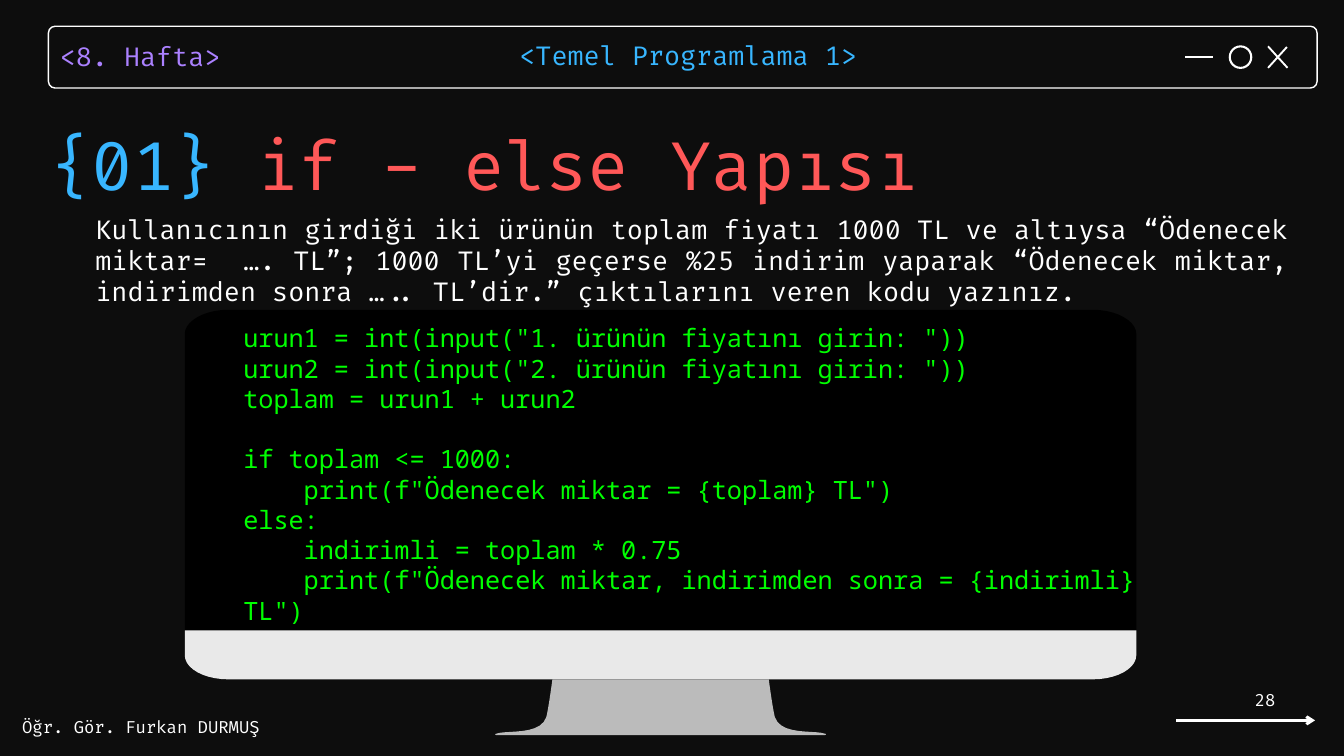
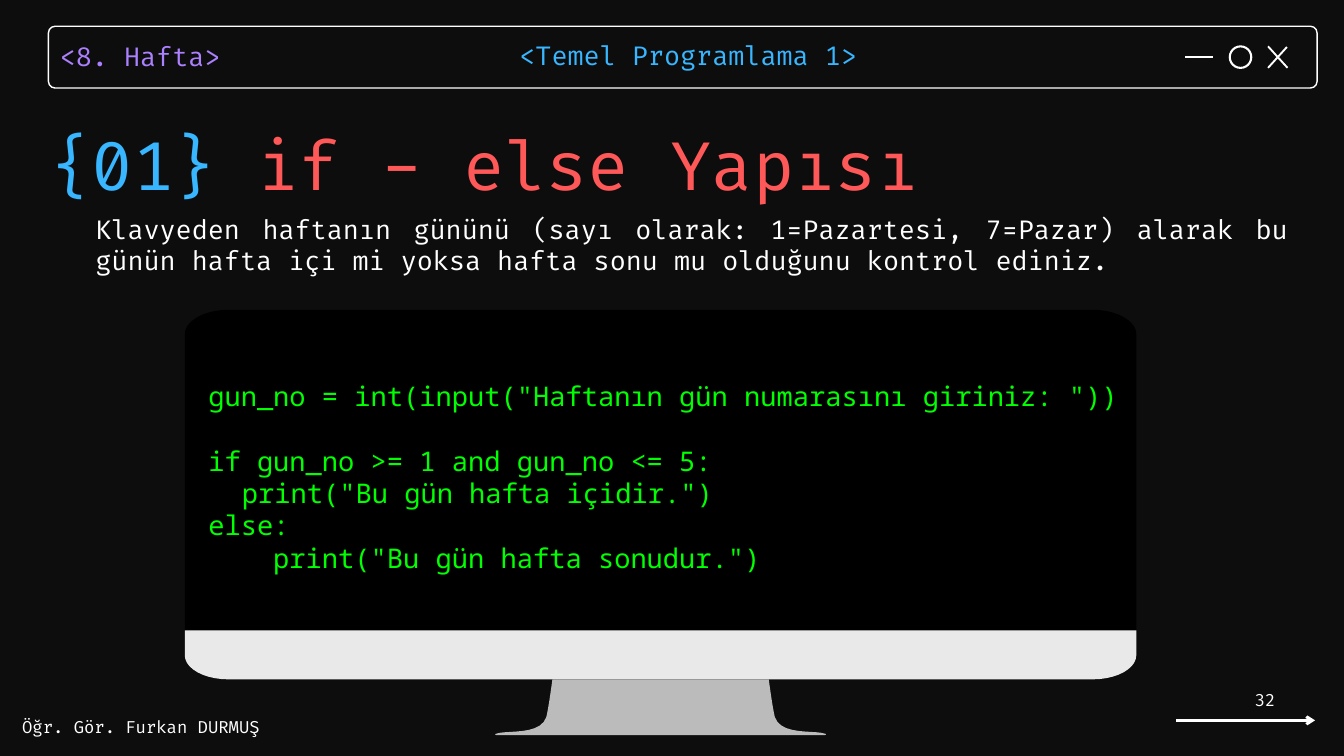
import pptx
import pptx.dml.color
import pptx.enum.shapes
import pptx.enum.text
import pptx.oxml.ns
import pptx.util
from lxml import etree

Inches = pptx.util.Inches
Pt = pptx.util.Pt
Shape = pptx.enum.shapes.MSO_SHAPE
Align = pptx.enum.text.PP_ALIGN

BACKGROUND, SCREEN, WHITE = "0D0D0D", "000000", "FFFFFF"
PURPLE, BLUE, RED, GREEN = "AB81FF", "38B6FF", "FF5858", "00FF00"
BASE, STAND = "E9E9E9", "BBBBBB"
BODY_FONT, CODE_FONT = "Fira Code", "Noto Sans Mono"
MONITOR_CENTER = 9.83

SCREEN_HALF = [[(3.4, 4.61), (3.04, 4.61), (2.75, 4.78), (2.75, 4.97)], [(2.75, 9.38)]]
BASE_HALF = [[(2.75, 9.38)], [(2.75, 9.75), (2.75, 9.95), (3.04, 10.11), (3.4, 10.11)]]
STAND_HALF = [
    [(8.22, 10.11), (8.22, 10.11), (8.17, 10.5), (8.13, 10.67)],
    [(8.13, 10.67), (8.04, 10.95), (7.53, 10.86), (7.38, 10.92)],
    [(7.38, 10.92), (7.36, 10.92), (7.37, 10.94), (7.39, 10.94)],
]


def rgb(value):
    return pptx.dml.color.RGBColor.from_string(value)


def trace(piece, steps=10):
    if len(piece) == 1:
        return piece
    weights = [
        ((1 - t) ** 3, 3 * t * (1 - t) ** 2, 3 * t**2 * (1 - t), t**3)
        for t in (step / steps for step in range(steps + 1))
    ]
    return [
        tuple(sum(w * point[axis] for w, point in zip(weight, piece)) for axis in (0, 1))
        for weight in weights
    ]


class CodeLesson:
    """Draws the elements of a programming lesson on the current page."""

    def __init__(self):
        self.deck = pptx.Presentation()
        self.deck.slide_width = Inches(20)
        self.deck.slide_height = Inches(11.25)
        self.page = None

    def add_page(self):
        self.page = self.deck.slides.add_slide(self.deck.slide_layouts[6])
        fill = self.page.background.fill
        fill.solid()
        fill.fore_color.rgb = rgb(BACKGROUND)

    def add_text(self, place, paragraphs, size, font=BODY_FONT, inset=True, **para_format):
        box = self.page.shapes.add_textbox(*map(Inches, place))
        frame = box.text_frame
        frame_format = {"word_wrap": True}
        if inset:
            frame_format["vertical_anchor"] = pptx.enum.text.MSO_ANCHOR.MIDDLE
        else:
            frame_format["auto_size"] = pptx.enum.text.MSO_AUTO_SIZE.SHAPE_TO_FIT_TEXT
            sides = ("left", "right", "top", "bottom")
            frame_format.update({f"margin_{side}": 0 for side in sides})
        for name, value in frame_format.items():
            setattr(frame, name, value)
        for index, spans in enumerate(paragraphs):
            para = frame.add_paragraph() if index else frame.paragraphs[0]
            for name, value in para_format.items():
                setattr(para, name, value)
            for text, color in spans:
                span = para.add_run()
                span.text = text
                for name, value in {"name": font, "size": Pt(size)}.items():
                    setattr(span.font, name, value)
                span.font.color.rgb = rgb(color)
        return frame

    def paint(self, shape, fill=None, line=None, width=0):
        shape.shadow.inherit = False
        if fill:
            shape.fill.solid()
            shape.fill.fore_color.rgb = rgb(fill)
        else:
            shape.fill.background()
        if line:
            shape.line.color.rgb = rgb(line)
            shape.line.width = Pt(width)
        else:
            shape.line.fill.background()

    def add_shape(self, kind, place, **paint):
        shape = self.page.shapes.add_shape(kind, *map(Inches, place))
        self.paint(shape, **paint)
        return shape

    def add_line(self, start, end, width=2, arrow=False):
        line = self.page.shapes.add_connector(
            pptx.enum.shapes.MSO_CONNECTOR.STRAIGHT, *map(Inches, start + end)
        )
        line.line.color.rgb = rgb(WHITE)
        line.line.width = Pt(width)
        qn = pptx.oxml.ns.qn
        if arrow:
            etree.SubElement(line.line._get_or_add_ln(), qn("a:tailEnd"), type="arrow")
        etree.SubElement(line._element.spPr, qn("a:effectLst"))

    def add_symmetric(self, half, fill):
        left = [point for piece in half for point in trace(piece)]
        right = [(2 * MONITOR_CENTER - x, y) for x, y in reversed(left)]
        points = [(Inches(x), Inches(y)) for x, y in left + right]
        builder = self.page.shapes.build_freeform(*points[0])
        builder.add_line_segments(points[1:], close=True)
        self.paint(builder.convert_to_shape(), fill=fill)

    def add_header(self):
        spacing = Pt(39.2)
        self.add_text((0.89, 0.52, 3.4, 0.53), [[("<8. Hafta>", PURPLE)]], 28,
                      inset=False, line_spacing=spacing)
        bar = self.add_shape(Shape.ROUNDED_RECTANGLE, (0.72, 0.39, 18.88, 0.92),
                             line=WHITE, width=1.5)
        bar.adjustments[0] = 0.11
        self.add_line((18.87, 0.69), (19.16, 1.01))
        self.add_line((19.15, 0.7), (18.87, 1.01))
        self.add_line((17.64, 0.85), (18.05, 0.85))
        self.add_shape(Shape.OVAL, (18.3, 0.69, 0.32, 0.32), line=WHITE, width=2.25)
        self.add_text((7.73, 0.51, 5.29, 0.53), [[("<Temel Programlama 1>", BLUE)]], 28,
                      inset=False, line_spacing=spacing)

    def add_footer(self, number):
        self.add_line((17.5, 10.72), (19.57, 10.72), width=3, arrow=True)
        self.add_text((0.33, 10.67, 3.67, 0.3), [[("Öğr. Gör. Furkan DURMUŞ", WHITE)]], 18,
                      inset=False)
        self.add_text((16.75, 10.21, 2.33, 0.4), [[(str(number), WHITE)]], 18,
                      alignment=Align.RIGHT)

    def add_title(self):
        self.add_text((0.75, 1.61, 19.25, 1.38),
                      [[("{01} ", BLUE), ("if - else Yapısı", RED)]], 72,
                      inset=False, line_spacing=Pt(102.6))

    def add_task(self, task, height):
        self.add_text((1.42, 3.17, 17.73, height), [[(task, WHITE)]], 28,
                      inset=False, alignment=Align.JUSTIFY)

    def add_monitor(self):
        self.add_symmetric(SCREEN_HALF, SCREEN)
        self.add_symmetric(BASE_HALF, BASE)
        self.add_symmetric(STAND_HALF, STAND)
        self.add_shape(Shape.RECTANGLE, (3.36, 4.89, 13.02, 4.24),
                       fill=SCREEN, line=SCREEN, width=2)

    def add_code(self, place, blocks, size):
        lines = [[(line, GREEN)] for block in blocks for line in block]
        frame = self.add_text(place, lines, size, font=CODE_FONT, inset=False)
        start = 0
        for block in blocks[:-1]:
            start += len(block)
            frame.paragraphs[start].space_before = Pt(size * 1.2)


EXERCISES = [
    {
        "number": 28,
        "task": "Kullanıcının girdiği iki ürünün toplam fiyatı 1000 TL ve altıysa "
                "“Ödenecek miktar=  …. TL”; 1000 TL’yi geçerse %25 indirim yaparak "
                "“Ödenecek miktar, indirimden sonra ….. TL’dir.” çıktılarını veren kodu yazınız.",
        "task_height": 1.41,
        "place": (3.62, 4.8, 13.29, 4.09),
        "size": 27,
        "blocks": [
            [
                'urun1 = int(input("1. ürünün fiyatını girin: "))',
                'urun2 = int(input("2. ürünün fiyatını girin: "))',
                "toplam = urun1 + urun2",
            ],
            [
                "if toplam <= 1000:",
                '    print(f"Ödenecek miktar = {toplam} TL")',
                "else:",
                "    indirimli = toplam * 0.75",
                '    print(f"Ödenecek miktar, indirimden sonra = {indirimli} TL")',
            ],
        ],
    },
    {
        "number": 32,
        "task": "Klavyeden haftanın gününü (sayı olarak: 1=Pazartesi, 7=Pazar) alarak bu "
                "günün hafta içi mi yoksa hafta sonu mu olduğunu kontrol ediniz.",
        "task_height": 0.94,
        "place": (3.1, 5.64, 13.86, 2.93),
        "size": 29,
        "blocks": [
            ['gun_no = int(input("Haftanın gün numarasını giriniz: "))'],
            [
                "if gun_no >= 1 and gun_no <= 5:",
                '\tprint("Bu gün hafta içidir.")',
                "else:",
                '    print("Bu gün hafta sonudur.")',
            ],
        ],
    },
]


def main():
    lesson = CodeLesson()
    for exercise in EXERCISES:
        lesson.add_page()
        lesson.add_header()
        lesson.add_footer(exercise["number"])
        lesson.add_task(exercise["task"], exercise["task_height"])
        lesson.add_title()
        lesson.add_monitor()
        lesson.add_code(exercise["place"], exercise["blocks"], exercise["size"])
    lesson.deck.save("out.pptx")


if __name__ == "__main__":
    main()
